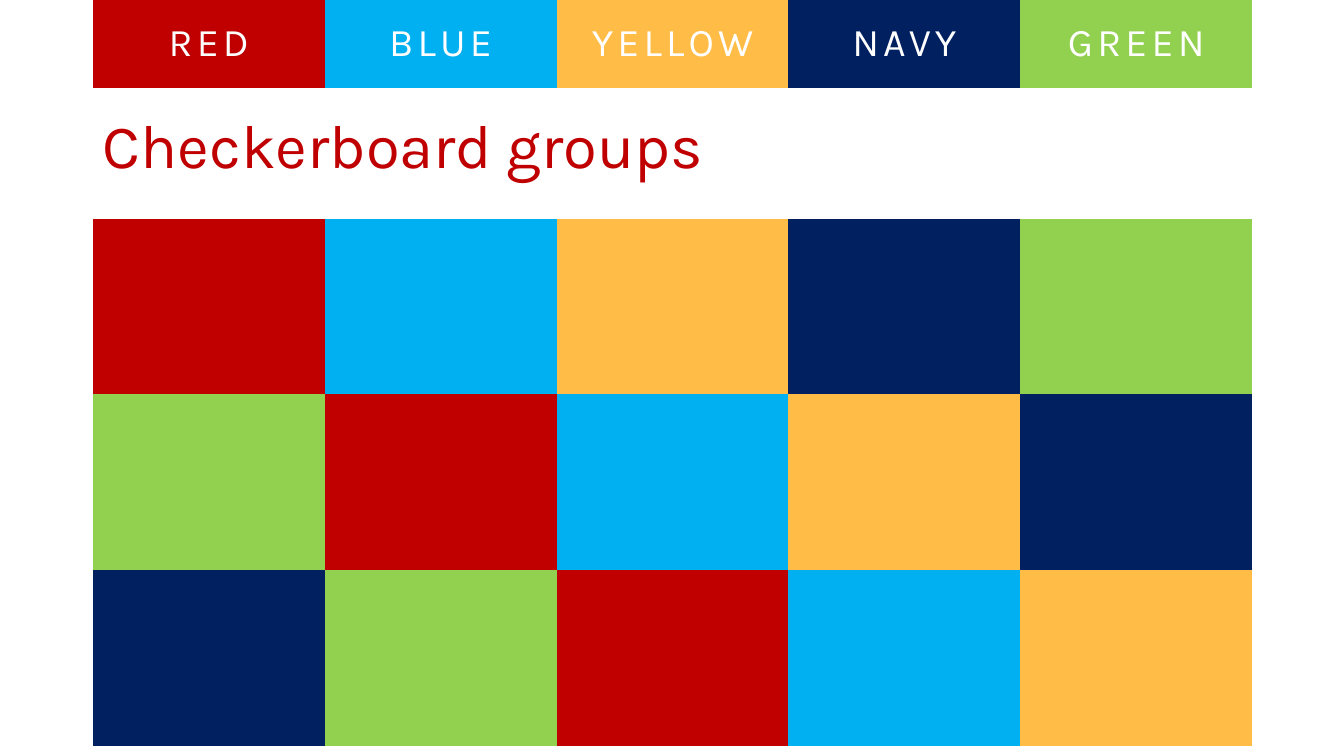
from pptx import Presentation
from pptx import util as u
from pptx.dml.color import RGBColor
from pptx.enum import text
from pptx.oxml.ns import qn

FONT = "Karla"
PALETTE = {
    "RED": "C00000",
    "BLUE": "00B0F0",
    "YELLOW": "FFBD47",
    "NAVY": "002060",
    "GREEN": "92D050",
}
LEFT, WIDTH = 0.92, 11.5
NO_STYLE_NO_GRID = "{2D5ABB26-0587-4C30-8999-92F81FD0307C}"


def rgb(value):
    return RGBColor.from_string(value)


def write(tf, words, size, color, align, spacing=None):
    """Put one formatted run of text in a text frame."""
    p = tf.paragraphs[0]
    p.alignment = align
    r = p.add_run()
    r.text = words
    for name, value in {"name": FONT, "size": u.Pt(size), "bold": False}.items():
        setattr(r.font, name, value)
    r.font.color.rgb = rgb(color)
    if spacing:
        r.font._element.set("spc", str(spacing * 100))
    return p


def add_title(slide, words):
    sp = slide.shapes.title
    box = {"left": LEFT, "top": 0.4, "width": 12.42, "height": 1.45}
    for name, value in box.items():
        setattr(sp, name, u.Inches(value))
    tf = sp.text_frame
    tf.word_wrap = True
    tf.vertical_anchor = text.MSO_ANCHOR.BOTTOM
    p = write(tf, words, 44, PALETTE["RED"], text.PP_ALIGN.LEFT)
    p.line_spacing = 0.9


def add_color_table(slide, top, height, rows):
    """Add a borderless table whose cells are filled from rows of colours."""
    frame = slide.shapes.add_table(
        len(rows), len(rows[0]),
        u.Inches(LEFT), u.Inches(top), u.Inches(WIDTH), u.Inches(height))
    table = frame.table
    table.first_row = table.horz_banding = False
    table._tbl.tblPr.find(qn("a:tableStyleId")).text = NO_STYLE_NO_GRID
    for i, colors in enumerate(rows):
        for j, color in enumerate(colors):
            fill = table.cell(i, j).fill
            fill.solid()
            fill.fore_color.rgb = rgb(color)
    return table


def main():
    prs = Presentation()
    prs.slide_width, prs.slide_height = u.Inches(13.33), u.Inches(7.5)
    slide = prs.slides.add_slide(prs.slide_layouts[5])
    colors = list(PALETTE.values())

    # Checkerboard: each pair of rows moves the colours one column right
    shifts = [row // 2 for row in range(6)]
    board = [colors[-n:] + colors[:-n] if n else colors for n in shifts]
    add_color_table(slide, 2.17, 5.23, board)

    add_title(slide, "Checkerboard groups")

    # Header strip with colour names
    header = add_color_table(slide, 0, 0.87, [colors])
    for cell, name in zip(header.iter_cells(), PALETTE):
        cell.vertical_anchor = text.MSO_ANCHOR.MIDDLE
        write(cell.text_frame, name, 28, "FFFFFF", text.PP_ALIGN.CENTER, spacing=3)

    prs.save("out.pptx")


if __name__ == "__main__":
    main()
